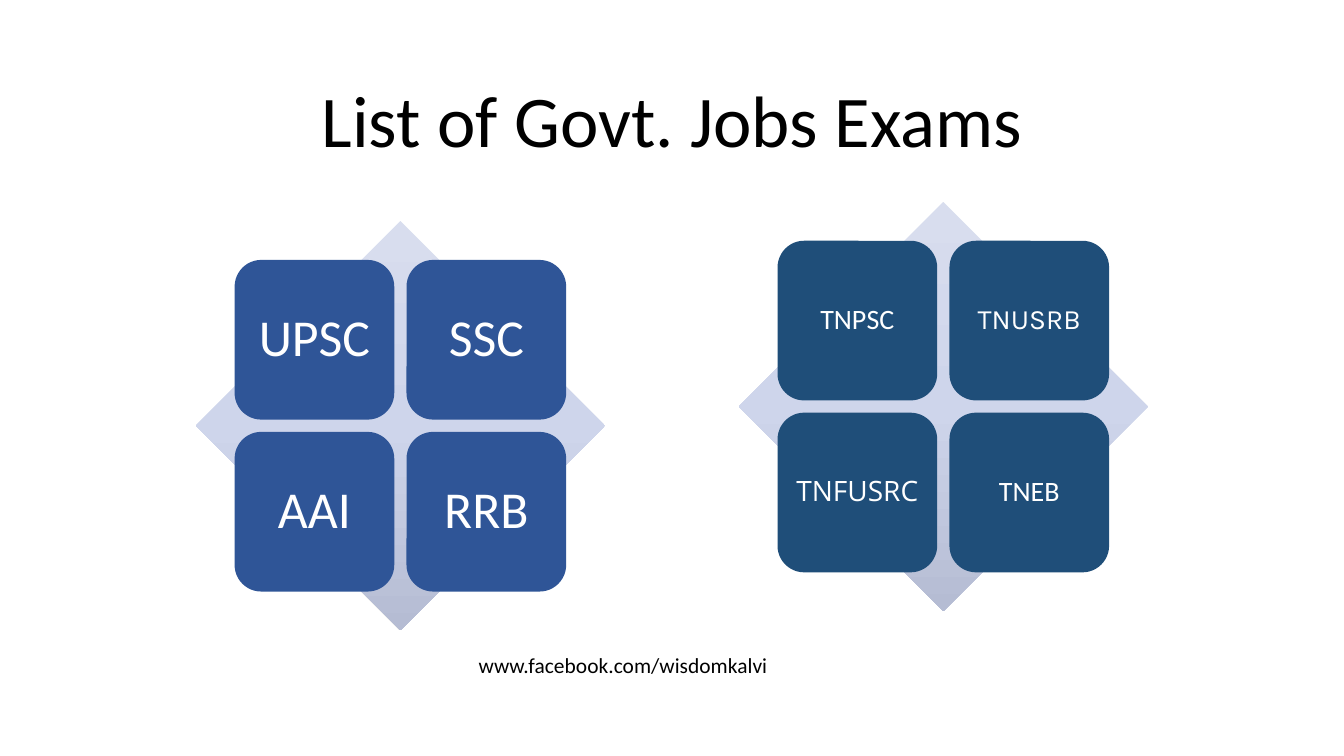
from dataclasses import dataclass

from lxml import etree
from pptx import Presentation
from pptx.dml.color import RGBColor
from pptx.enum.shapes import MSO_SHAPE
from pptx.enum.text import MSO_ANCHOR, PP_ALIGN
from pptx.oxml.ns import qn
from pptx.shapes.autoshape import Shape
from pptx.slide import Slide
from pptx.util import Pt

DIAMOND = MSO_SHAPE.DIAMOND
ROUNDED = MSO_SHAPE.ROUNDED_RECTANGLE
CENTER, LEFT = PP_ALIGN.CENTER, PP_ALIGN.LEFT
MIDDLE, TOP = MSO_ANCHOR.MIDDLE, MSO_ANCHOR.TOP

BODY_FONT = "Calibri"
BLACK, WHITE = "000000", "FFFFFF"
DIAMOND_STOPS = ((0, "D8DDEE"), (50, "CED5EB"), (100, "B5BCD3"))

# Matrix geometry in points
DIAMOND_SIZE = 292.4
TILE_SIZE = 0.39 * DIAMOND_SIZE
TILE_OFFSET = 0.095 * DIAMOND_SIZE
TILE_PITCH = 0.42 * DIAMOND_SIZE


@dataclass
class Tile:
    label: str
    font: str = BODY_FONT


@dataclass
class Matrix:
    left: float
    top: float
    color: str
    text_size: float
    inset: float
    tiles: tuple[Tile, ...]


MATRICES = (
    Matrix(139.8, 157.9, "2F5597", 37, 11,
           (Tile("UPSC"), Tile("SSC"), Tile("AAI"), Tile("RRB"))),
    Matrix(527.6, 144.2, "1F4E79", 20, 6,
           (Tile("TNPSC"), Tile("TNUSRB", "Karla"),
            Tile("TNFUSRC", "Open Sans"), Tile("TNEB"))),
)


def rgb(color: str) -> RGBColor:
    return RGBColor.from_string(color)


def write_text(shape: Shape, text: str, size: float, color: str,
               font: str = BODY_FONT, align: PP_ALIGN = CENTER,
               anchor: MSO_ANCHOR = MIDDLE, spacing: float = 0.9) -> None:
    frame = shape.text_frame
    frame.text = text
    frame.word_wrap = True
    frame.vertical_anchor = anchor
    paragraph = frame.paragraphs[0]
    paragraph.alignment = align
    paragraph.line_spacing = spacing
    run_font = paragraph.runs[0].font
    run_font.name = font
    run_font.size = Pt(size)
    run_font.color.rgb = rgb(color)


def fill_gradient(shape: Shape, stops: tuple[tuple[int, str], ...]) -> None:
    shape.fill.gradient()
    shape.fill.gradient_angle = 270
    stop_list = shape.element.spPr.find(qn("a:gradFill")).find(qn("a:gsLst"))
    stop_list.clear()
    for percent, color in stops:
        stop = etree.SubElement(stop_list, qn("a:gs"), pos=str(percent * 1000))
        etree.SubElement(stop, qn("a:srgbClr"), val=color)


def draw_matrix(slide: Slide, matrix: Matrix) -> None:
    group = slide.shapes.add_group_shape()

    # Diamond behind the tiles
    diamond = group.shapes.add_shape(DIAMOND, Pt(matrix.left), Pt(matrix.top),
                                     Pt(DIAMOND_SIZE), Pt(DIAMOND_SIZE))
    diamond.shadow.inherit = False
    diamond.line.fill.background()
    fill_gradient(diamond, DIAMOND_STOPS)

    # Two by two tiles
    for index, tile in enumerate(matrix.tiles):
        row, column = divmod(index, 2)
        shape = group.shapes.add_shape(
            ROUNDED,
            Pt(matrix.left + TILE_OFFSET + column * TILE_PITCH),
            Pt(matrix.top + TILE_OFFSET + row * TILE_PITCH),
            Pt(TILE_SIZE), Pt(TILE_SIZE))
        shape.shadow.inherit = False
        shape.line.fill.background()
        shape.fill.solid()
        shape.fill.fore_color.rgb = rgb(matrix.color)
        write_text(shape, tile.label, matrix.text_size, WHITE, tile.font)
        frame = shape.text_frame
        frame.margin_left = frame.margin_right = Pt(matrix.inset)
        frame.margin_top = frame.margin_bottom = Pt(matrix.inset)


def main() -> None:
    presentation = Presentation()
    presentation.slide_width = Pt(960)
    presentation.slide_height = Pt(540)
    slide = presentation.slides.add_slide(presentation.slide_layouts[6])

    # Title
    title = slide.shapes.add_textbox(Pt(66), Pt(44), Pt(828), Pt(89.3))
    write_text(title, "List of Govt. Jobs Exams", 52, BLACK)

    # Exam matrices
    for matrix in MATRICES:
        draw_matrix(slide, matrix)

    # Web address
    address = slide.shapes.add_textbox(Pt(334.8), Pt(462.2), Pt(276.5), Pt(24.5))
    write_text(address, "www.facebook.com/wisdomkalvi", 15.3, BLACK,
               align=LEFT, anchor=TOP, spacing=1.0)

    presentation.save("out.pptx")


if __name__ == "__main__":
    main()
